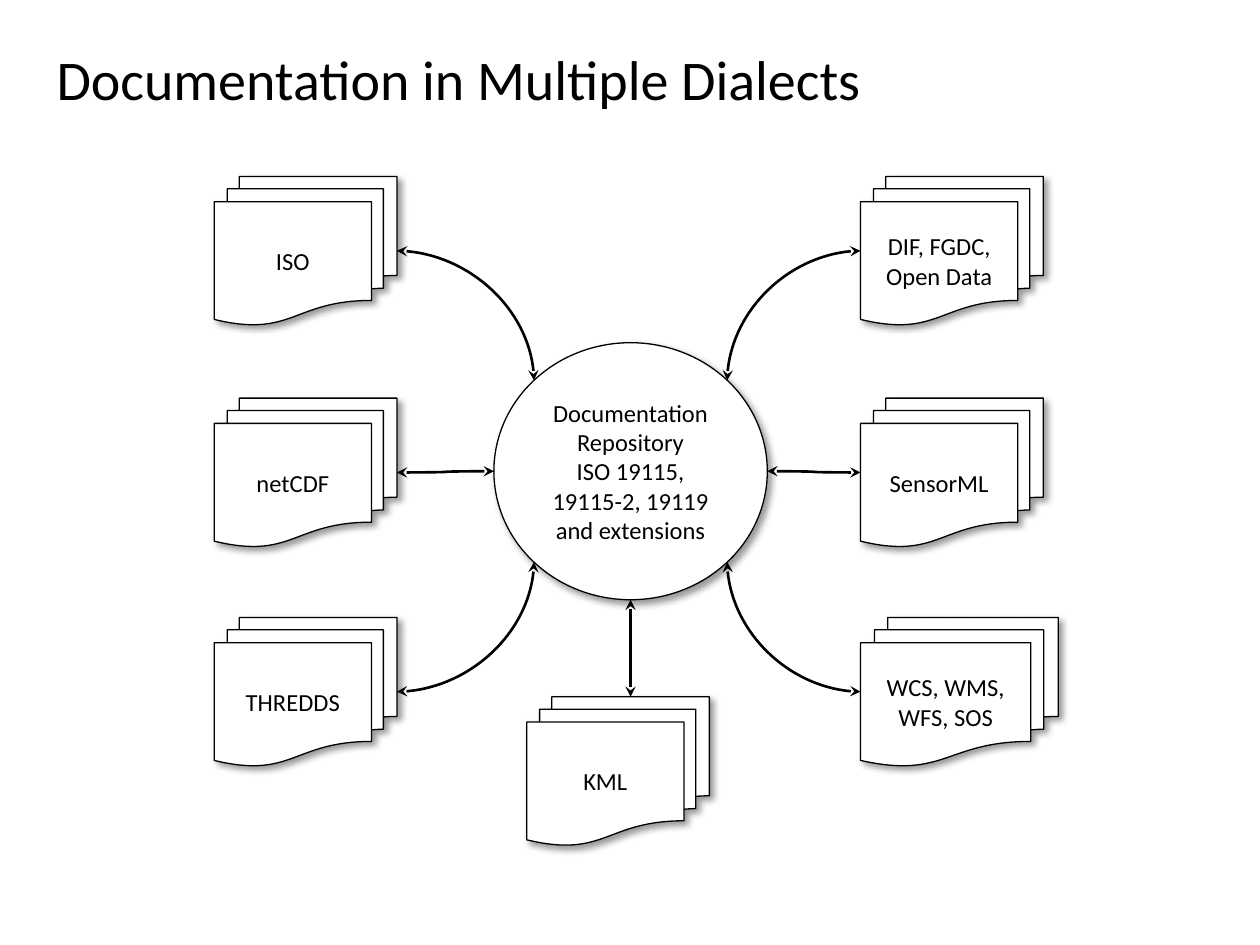
from lxml import etree
from pptx import Presentation
from pptx import util as u
from pptx.dml.color import RGBColor
from pptx.enum import shapes, text
from pptx.oxml import ns

BLACK = RGBColor(0, 0, 0)
WHITE = RGBColor(255, 255, 255)
FONT = "Calibri"

DOCUMENT_WIDTH, DOCUMENT_HEIGHT = 1.45, 1.18
LEFT, RIGHT = 1.7, 6.83
ROWS = (1.4, 3.16, 4.9)
ANCHOR_DROP = 0.59  # height of a document's side arrow below its top
REPOSITORY = (3.92, 2.72, 2.17, 2.04)
DIAGONAL = 0.5 ** 0.5


def add_child(parent, tag, **attributes):
    return etree.SubElement(parent, ns.qn(tag), attributes)


def write_paragraphs(frame, lines, size, alignment):
    frame.word_wrap = True
    frame.vertical_anchor = text.MSO_ANCHOR.MIDDLE
    for index, line in enumerate(lines):
        paragraph = frame.add_paragraph() if index else frame.paragraphs[0]
        paragraph.text = line
        paragraph.alignment = alignment
        paragraph.font.name = FONT
        paragraph.font.size = u.Pt(size)
        paragraph.font.color.rgb = BLACK


def add_shadow(shape):
    """Give the shape a soft shadow toward the lower right."""
    shape.shadow.inherit = False
    effects = shape._element.spPr.find(ns.qn("a:effectLst"))
    shadow = add_child(effects, "a:outerShdw", blurRad=str(u.Pt(4)), dist=str(u.Pt(3)),
                       dir="2700000", algn="tl", rotWithShape="0")
    color = add_child(shadow, "a:srgbClr", val=str(BLACK))
    add_child(color, "a:alpha", val="40000")


def add_node(slide, kind, box, lines):
    shape = slide.shapes.add_shape(kind, *map(u.Inches, box))
    shape.fill.solid()
    shape.fill.fore_color.rgb = WHITE
    shape.line.color.rgb = BLACK
    shape.line.width = u.Pt(0.75)
    add_shadow(shape)
    write_paragraphs(shape.text_frame, lines, 14, text.PP_ALIGN.CENTER)
    return shape


def add_documents(slide, left, top, lines, width=DOCUMENT_WIDTH):
    return add_node(slide, shapes.MSO_SHAPE.FLOWCHART_MULTIDOCUMENT,
                    (left, top, width, DOCUMENT_HEIGHT), lines)


def add_arrow(slide, kind, start, end, preset=None):
    """Add a two-headed arrow; preset replaces the connector's geometry."""
    connector = slide.shapes.add_connector(kind, *map(u.Inches, start + end))
    connector.line.color.rgb = BLACK
    connector.line.width = u.Pt(1.5)
    properties = connector._element.spPr
    if preset:
        properties.find(ns.qn("a:prstGeom")).set("prst", preset)
    line = properties.find(ns.qn("a:ln"))
    for tag in ("a:headEnd", "a:tailEnd"):
        add_child(line, tag, type="stealth", w="med", len="med")
    add_child(properties, "a:effectLst")


def add_title(slide, box, title):
    shape = slide.shapes.add_textbox(*map(u.Inches, box))
    write_paragraphs(shape.text_frame, [title], 32, text.PP_ALIGN.LEFT)


def add_repository(slide, box):
    add_node(slide, shapes.MSO_SHAPE.OVAL, box,
             ["Documentation", "Repository", "ISO 19115, 19115-2, 19119 and extensions"])


def add_side(slide, left, arrow_x, direction, stacks, repository):
    """Add a column of documents, each joined to the repository.

    direction is -1 for the column left of the repository, 1 for the right.
    """
    x, y, width, height = repository
    center_x, center_y = x + width / 2, y + height / 2
    curve = shapes.MSO_CONNECTOR.CURVE
    for row, (top, (lines, stack_width)) in enumerate(zip(ROWS, stacks)):
        add_documents(slide, left, top, lines, stack_width)
        start = (arrow_x, top + ANCHOR_DROP)
        if row == 1:
            end = (center_x + direction * width / 2, center_y)
            add_arrow(slide, curve, start, end)
        else:
            end = (center_x + direction * width / 2 * DIAGONAL,
                   center_y + (row - 1) * height / 2 * DIAGONAL)
            add_arrow(slide, curve, start, end, "curvedConnector2")


def add_bottom(slide, left, top, lines, repository):
    x, y, width, height = repository
    center_x = x + width / 2
    add_documents(slide, left, top, lines)
    add_arrow(slide, shapes.MSO_CONNECTOR.STRAIGHT, (center_x, top), (center_x, y + height))


def main():
    presentation = Presentation()
    presentation.slide_width, presentation.slide_height = u.Inches(10), u.Inches(7.5)
    slide = presentation.slides.add_slide(presentation.slide_layouts[6])
    add_title(slide, (0.35, 0.3, 7.45, 0.64), "Documentation in Multiple Dialects")
    add_repository(slide, REPOSITORY)
    add_side(slide, LEFT, LEFT + DOCUMENT_WIDTH, -1, [
        (["ISO"], DOCUMENT_WIDTH),
        (["netCDF"], DOCUMENT_WIDTH),
        (["THREDDS"], DOCUMENT_WIDTH),
    ], REPOSITORY)
    add_side(slide, RIGHT, RIGHT, 1, [
        (["DIF, FGDC,", "Open Data"], DOCUMENT_WIDTH),
        (["SensorML"], DOCUMENT_WIDTH),
        (["WCS, WMS, WFS, SOS"], 1.57),
    ], REPOSITORY)
    add_bottom(slide, 4.18, 5.53, ["KML"], REPOSITORY)
    presentation.save("out.pptx")


if __name__ == "__main__":
    main()
